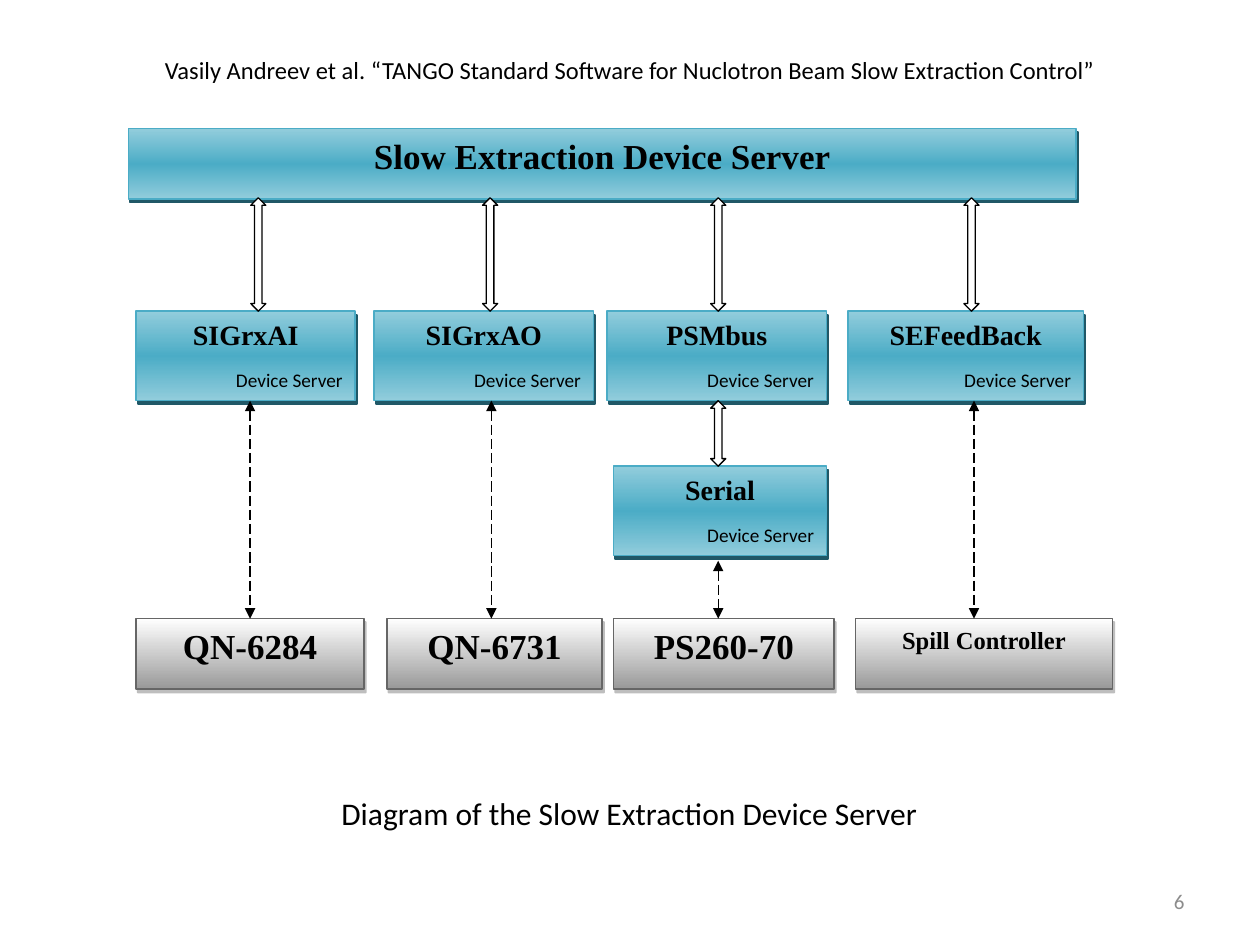
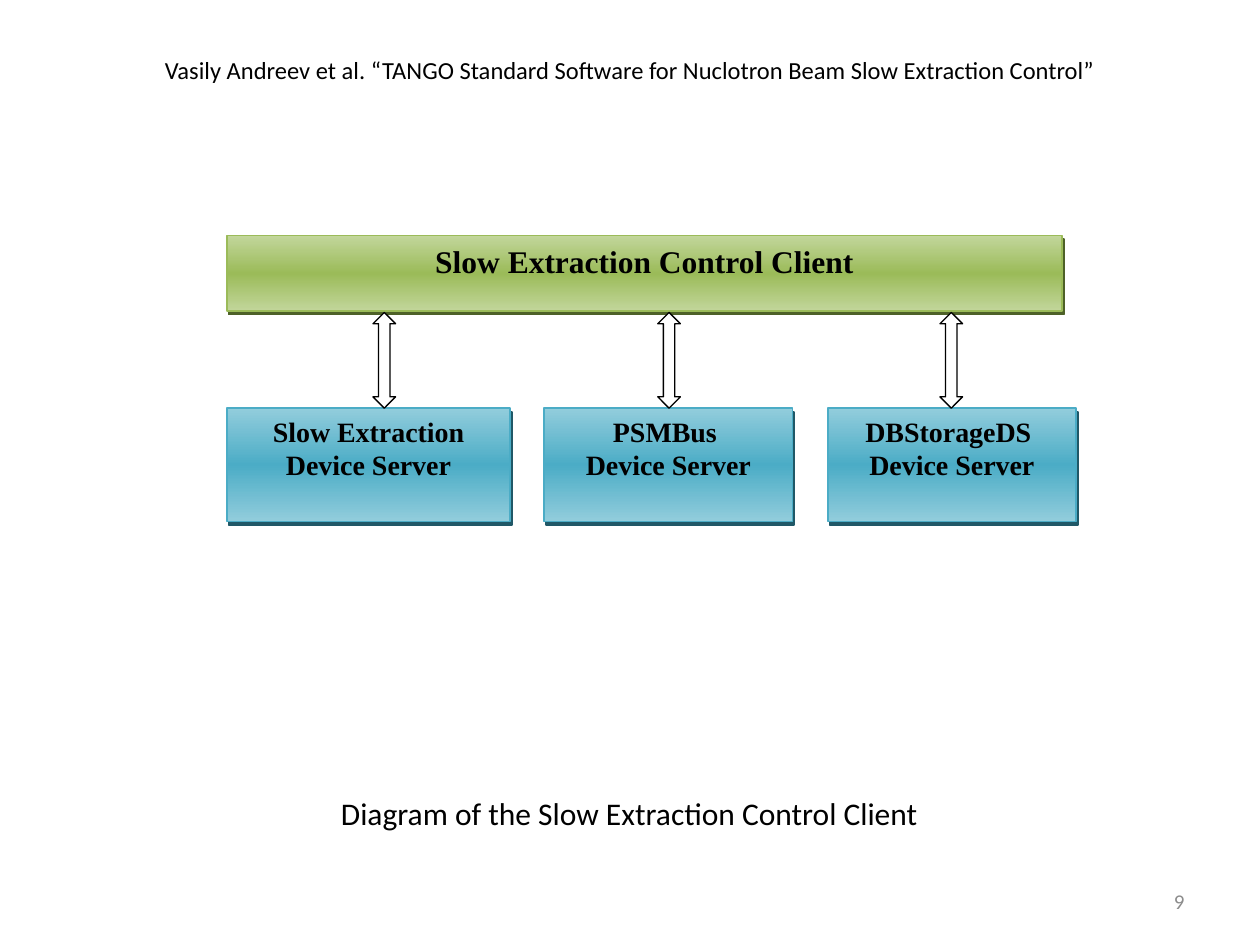
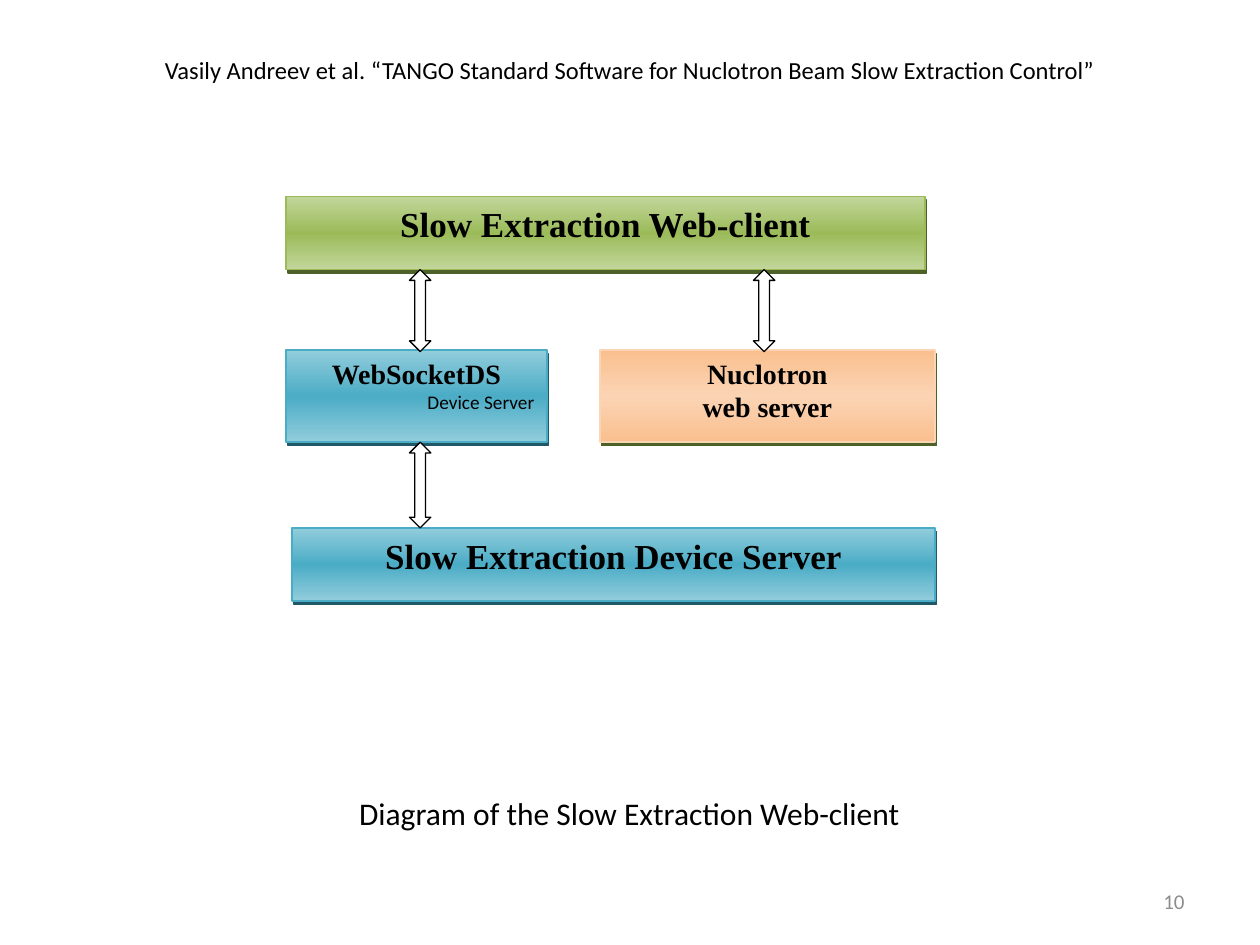
from copy import deepcopy
from dataclasses import dataclass

from lxml.etree import SubElement
from pptx import Presentation
from pptx.dml.color import RGBColor
from pptx.enum.dml import MSO_LINE
from pptx.enum.shapes import MSO_CONNECTOR, MSO_SHAPE
from pptx.enum.text import MSO_ANCHOR as ANCHOR, MSO_AUTO_SIZE as AUTO, PP_ALIGN as ALIGN
from pptx.oxml.ns import qn
from pptx.shapes.autoshape import Shape
from pptx.slide import Slide
from pptx.text.text import TextFrame
from pptx.util import Inches, Pt

SERIF, SANS = "Times New Roman", "Calibri"
BLACK, WHITE, GREY = "000000", "FFFFFF", "8C8C8C"
HEADER = "Vasily Andreev et al. “TANGO Standard Software for Nuclotron Beam Slow Extraction Control”"


@dataclass(frozen=True)
class Style:
    """Gradient, border and shadow of a kind of box."""
    stops: tuple[str, ...]
    line: str
    shadow: str
    opacity: int = 100


SERVER = Style(("92CDDC", "4BACC6", "92CDDC"), "4BACC6", "205867")
CLIENT = Style(("C2D69B", "9BBB59", "C2D69B"), "9BBB59", "4E6128")
WEB = Style(("FABF8F", "FBD4B4", "FABF8F"), "FBD4B4", "4E6128")
DEVICE = Style(("FFFFFF", "999999"), "666666", "7F7F7F", 50)


@dataclass(frozen=True)
class Para:
    """One paragraph and its format."""
    text: str
    size: int
    font: str = SERIF
    color: str = BLACK
    align: ALIGN = ALIGN.CENTER
    before: int = 0


@dataclass(frozen=True)
class Box:
    """A labelled box within a row."""
    left: float
    width: float
    paras: tuple[Para, ...]


@dataclass(frozen=True)
class Row:
    """Boxes that share a style, a top and a height."""
    style: Style
    top: float
    height: float
    boxes: tuple[Box, ...]


@dataclass(frozen=True)
class Arrows:
    """Equal block arrows, placed by their left edges."""
    top: float
    height: float
    width: float
    lefts: tuple[float, ...]


@dataclass(frozen=True)
class Link:
    """A vertical dashed link, joined to the box named by target."""
    x: float
    top: float
    bottom: float
    target: str = ""


@dataclass(frozen=True)
class Diagram:
    """The content of one slide."""
    caption: str
    number: int
    rows: tuple[Row, ...]
    arrows: tuple[Arrows, ...]
    links: tuple[Link, ...] = ()
    space_after: int = 0


def label(text: str, size: int, before: int = 0) -> tuple[Para, ...]:
    """Return a plain box label."""
    return (Para(text, size, before=before),)


def server(name: str) -> tuple[Para, ...]:
    """Return a name with the device server tag below it."""
    return (Para(name, 16), Para("Device Server", 11, SANS, align=ALIGN.RIGHT))


DIAGRAMS = (
    Diagram(
        "Diagram of the Slow Extraction Device Server", 6,
        (
            Row(SERVER, 1.02, 0.56, (Box(1.02, 7.52, label("Slow Extraction Device Server", 20)),)),
            Row(SERVER, 2.47, 0.71, (
                Box(1.08, 1.74, server("SIGrxAI")),
                Box(2.97, 1.74, server("SIGrxAO")),
                Box(4.82, 1.74, server("PSMbus")),
                Box(6.73, 1.87, server("SEFeedBack")),
            )),
            Row(SERVER, 3.7, 0.71, (Box(4.87, 1.69, server("Serial")),)),
            Row(DEVICE, 4.91, 0.56, (
                Box(1.08, 1.81, label("QN-6284", 20)),
                Box(3.07, 1.71, label("QN-6731", 20)),
                Box(4.87, 1.75, label("PS260-70", 20)),
                Box(6.79, 2.04, label("Spill Controller", 14, before=4)),
            )),
        ),
        (Arrows(1.57, 0.9, 0.12, (1.99, 3.83, 5.64, 7.65)), Arrows(3.18, 0.52, 0.12, (5.64,))),
        (
            Link(1.99, 3.18, 4.91, "QN-6284"),
            Link(3.9, 3.18, 4.91),
            Link(7.73, 3.18, 4.91),
            Link(5.7, 4.45, 4.91),
        ),
        space_after=10,
    ),
    Diagram(
        "Diagram of the Slow Extraction Control Client", 9,
        (
            Row(CLIENT, 1.87, 0.6, (Box(1.8, 6.63, label("Slow Extraction Control Client", 18)),)),
            Row(SERVER, 3.24, 0.9, (
                Box(1.8, 2.25, label("Slow Extraction Device Server", 16)),
                Box(4.32, 1.97, label("PSMBus \vDevice Server", 16)),
                Box(6.57, 1.97, label("DBStorageDS \vDevice Server", 16)),
            )),
        ),
        (Arrows(2.48, 0.76, 0.18, (2.96, 5.22, 7.46)),),
    ),
    Diagram(
        "Diagram of the Slow Extraction Web-client", 10,
        (
            Row(CLIENT, 1.56, 0.58, (Box(2.27, 5.07, label("Slow Extraction Web-client", 20)),)),
            Row(SERVER, 2.78, 0.73, (Box(2.27, 2.07, server("WebSocketDS")),)),
            Row(WEB, 2.78, 0.73, (
                Box(4.76, 2.66, label("Nuclotron", 16) + label("web server", 16)),
            )),
            Row(SERVER, 4.19, 0.58, (Box(2.32, 5.1, label("Slow Extraction Device Server", 20)),)),
        ),
        (Arrows(2.14, 0.65, 0.17, (3.25, 5.98)), Arrows(3.51, 0.68, 0.17, (3.25,))),
    ),
)


def rgb(color: str) -> RGBColor:
    """Turn a hex string into a colour."""
    return RGBColor.from_string(color)


def write(tf: TextFrame, paras: tuple[Para, ...], space_after: int = 0) -> None:
    """Fill a text frame with formatted paragraphs."""
    tf.word_wrap = True
    for i, para in enumerate(paras):
        p = tf.add_paragraph() if i else tf.paragraphs[0]
        p.text = para.text
        layout = {"alignment": para.align, "space_before": Pt(para.before), "space_after": Pt(space_after)}
        for key, value in layout.items():
            setattr(p, key, value)
        for r in p.runs:
            r.font.color.rgb = rgb(para.color)
            for key, value in {"name": para.font, "size": Pt(para.size), "bold": para.font == SERIF}.items():
                setattr(r.font, key, value)
        for br in p._p.findall(qn("a:br")):
            SubElement(br, qn("a:rPr"), sz=str(para.size * 100))


def add_text(s: Slide, left: float, top: float, width: float, height: float, para: Para) -> TextFrame:
    """Add a text box with one paragraph."""
    tf = s.shapes.add_textbox(Inches(left), Inches(top), Inches(width), Inches(height)).text_frame
    write(tf, (para,))
    return tf


def paint(sp: Shape, style: Style) -> None:
    """Give a box its gradient, border and shadow."""
    sp.fill.gradient()
    sp.fill.gradient_angle = 270
    stops = sp._element.spPr.find(".//" + qn("a:gsLst"))
    while len(stops) < len(style.stops):
        stops.append(deepcopy(stops[0]))
    for i, (stop, color) in enumerate(zip(sp.fill.gradient_stops, style.stops)):
        stop.position = i / (len(style.stops) - 1)
        stop.color.rgb = rgb(color)
    sp.line.color.rgb = rgb(style.line)
    sp.line.width = Pt(1)
    sp.shadow.inherit = False
    effects = sp._element.spPr.find(qn("a:effectLst"))
    shadow = SubElement(effects, qn("a:outerShdw"), dist=str(Pt(2.2)), dir=str(63 * 60000),
                        algn="ctr", rotWithShape="0")
    tint = SubElement(shadow, qn("a:srgbClr"), val=style.shadow)
    SubElement(tint, qn("a:alpha"), val=str(style.opacity * 1000))


def add_row(s: Slide, row: Row, space_after: int) -> dict[str, Shape]:
    """Draw a row and return its boxes by label."""
    shapes = {}
    for box in row.boxes:
        sp = s.shapes.add_shape(MSO_SHAPE.RECTANGLE, Inches(box.left), Inches(row.top),
                                Inches(box.width), Inches(row.height))
        paint(sp, row.style)
        sp.text_frame.vertical_anchor = ANCHOR.TOP
        write(sp.text_frame, box.paras, space_after)
        shapes[box.paras[0].text] = sp
    return shapes


def add_arrows(s: Slide, arrows: Arrows) -> None:
    """Draw two-way arrows whose heads take a fifth of the height."""
    for left in arrows.lefts:
        sp = s.shapes.add_shape(MSO_SHAPE.UP_DOWN_ARROW, Inches(left), Inches(arrows.top),
                                Inches(arrows.width), Inches(arrows.height))
        sp.adjustments[0] = 0.2 * arrows.height / arrows.width
        sp.adjustments[1] = 0.5
        sp.fill.solid()
        sp.fill.fore_color.rgb = rgb(WHITE)
        sp.line.color.rgb = rgb(BLACK)
        sp.line.width = Pt(0.75)
        sp.shadow.inherit = False


def add_link(s: Slide, link: Link, shapes: dict[str, Shape]) -> None:
    """Draw a dashed line with a head at both ends."""
    c = s.shapes.add_connector(MSO_CONNECTOR.STRAIGHT, Inches(link.x), Inches(link.top),
                               Inches(link.x), Inches(link.bottom))
    if link.target:
        c.end_connect(shapes[link.target], 0)
        c.begin_x = c.end_x
    c.line.color.rgb = rgb(BLACK)
    c.line.width = Pt(0.75)
    c.line.dash_style = MSO_LINE.LONG_DASH
    spPr = c._element.spPr
    for end in ("a:headEnd", "a:tailEnd"):
        SubElement(spPr.find(qn("a:ln")), qn(end), type="triangle")
    SubElement(spPr, qn("a:effectLst"))


def add_diagram(prs: Presentation, diagram: Diagram) -> None:
    """Add one slide with its header, diagram, caption and number."""
    s = prs.slides.add_slide(prs.slide_layouts[6])
    shapes = {}
    for row in diagram.rows:
        shapes.update(add_row(s, row, diagram.space_after))
    for arrows in diagram.arrows:
        add_arrows(s, arrows)
    for link in diagram.links:
        add_link(s, link, shapes)
    header = add_text(s, 0.86, 0.39, 8.28, 0.34, Para(HEADER, 14, SANS))
    caption = add_text(s, 1.09, 6.25, 7.81, 0.4, Para(diagram.caption, 18, SANS))
    for tf in (header, caption):
        tf.auto_size = AUTO.SHAPE_TO_FIT_TEXT
    number = add_text(s, 7.17, 6.95, 2.33, 0.4, Para(str(diagram.number), 12, SANS, GREY, ALIGN.RIGHT))
    number.vertical_anchor = ANCHOR.MIDDLE


def main() -> None:
    """Build the presentation."""
    prs = Presentation()
    prs.slide_width, prs.slide_height = Inches(10), Inches(7.5)
    for diagram in DIAGRAMS:
        add_diagram(prs, diagram)
    prs.save("out.pptx")


if __name__ == "__main__":
    main()
